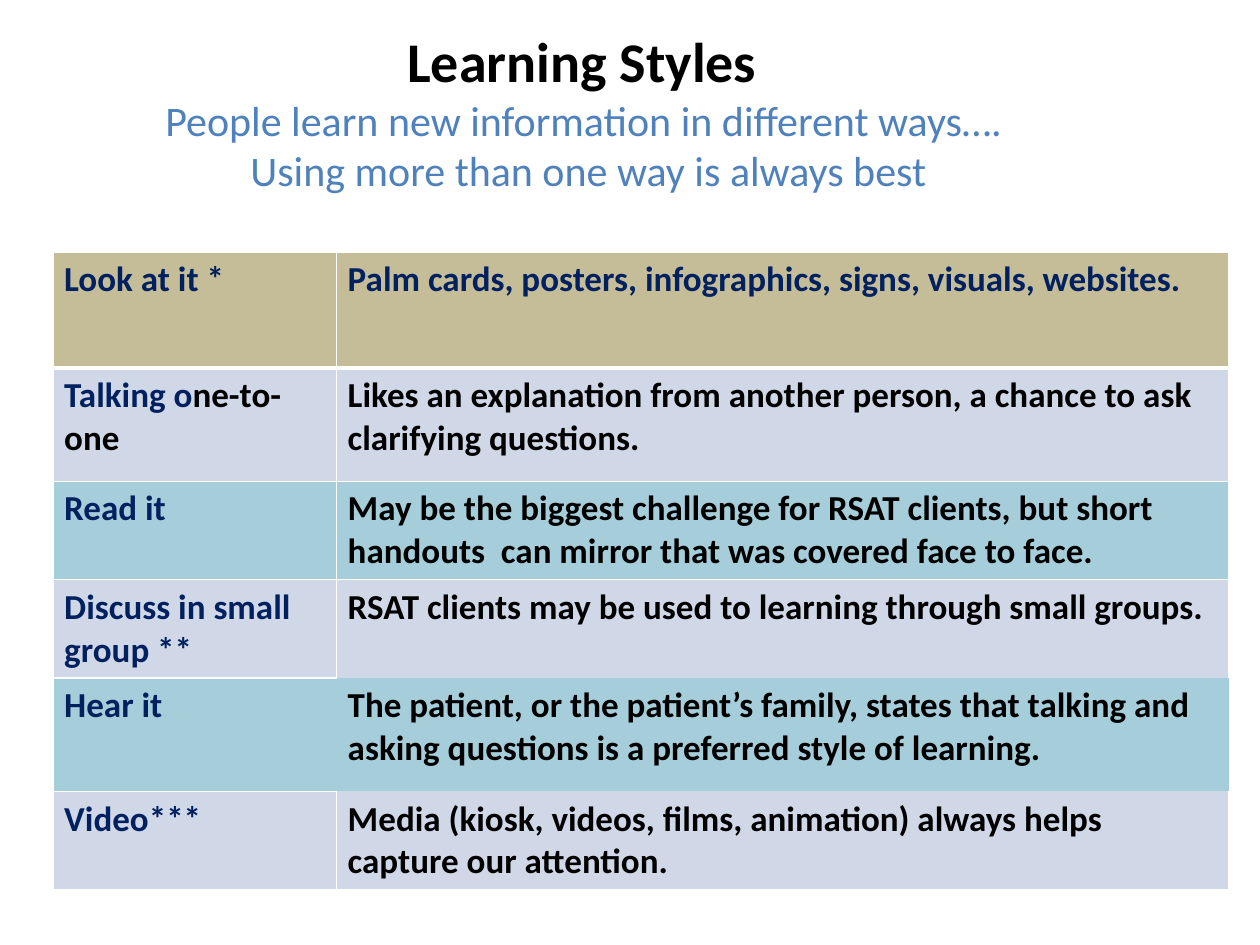
from lxml.etree import SubElement
from pptx import Presentation
from pptx.dml.color import RGBColor
from pptx.enum.text import MSO_ANCHOR, MSO_AUTO_SIZE, PP_ALIGN
from pptx.oxml.ns import qn
from pptx.util import Inches, Pt

COLORS = {
    "black": "000000", "blue": "4F81BD", "navy": "002060", "white": "FFFFFF",
    "tan": "C4BD97", "pale": "D0D8E8", "teal": "A6CEDA",
}
TITLE_LINES = [
    ("Learning Styles ", 32, "black", True),
    ("People learn new information in different ways…. ", 24, "blue", False),
    ("Using more than one way is always best", 24, "blue", False),
]
COLUMN_WIDTHS = [2.25, 7.08]
# Row height, fill, then the runs of the style cell and of the description cell
LEARNING_STYLES = [
    (0.92, "tan", [("Look at it *", "navy")],
     [("Palm cards, posters, infographics, signs, visuals, websites.", "navy")]),
    (0.9, "pale", [("Talking o", "navy"), ("ne-to- one", "black")],
     [("Likes an explanation from another person, a chance to ask clarifying questions.", "black")]),
    (0.75, "teal", [("Read it", "navy")],
     [("May be the biggest challenge for RSAT clients, but short handouts  can mirror "
       "that was covered face to face.", "black")]),
    (0.67, "pale", [("Discuss in small group **", "navy")],
     [("RSAT clients may be used to learning through small groups.", "black")]),
    (0.9, "teal", [("Hear it", "navy")],
     [("The patient, or the patient’s family, states that talking and asking questions "
       "is a preferred style of learning.", "black")]),
    (0.75, "pale", [("Video***", "navy")],
     [("Media (kiosk, videos, films, animation) always helps capture our attention.", "black")]),
]
# Sides without a line, by row and column
OPEN_SIDES = {(3, 1): "B", (4, 0): "R", (4, 1): "LRTB", (5, 1): "T"}


class SlideBuilder:
    font_name = "Calibri"

    def __init__(self, slide):
        self.slide = slide

    def add_run(self, paragraph, text, size, color, bold):
        run = paragraph.add_run()
        run.text = text
        run_format = {"name": self.font_name, "size": Pt(size), "bold": bold}
        for attribute, value in run_format.items():
            setattr(run.font, attribute, value)
        run.font.color.rgb = RGBColor.from_string(COLORS[color])

    def add_title(self, lines, left, top, width, height):
        title = self.slide.shapes.title
        place = {"left": left, "top": top, "width": width, "height": height}
        for attribute, value in place.items():
            setattr(title, attribute, Inches(value))
        frame_format = {"word_wrap": True, "auto_size": MSO_AUTO_SIZE.NONE,
                        "vertical_anchor": MSO_ANCHOR.MIDDLE}
        for attribute, value in frame_format.items():
            setattr(title.text_frame, attribute, value)
        heading = title.text_frame.paragraphs[0]
        heading.alignment = PP_ALIGN.CENTER
        heading.space_after = Pt(6)
        for index, (text, size, color, bold) in enumerate(lines):
            self.add_run(heading, text, size, color, bold)
            if index < len(lines) - 1:
                heading.add_line_break()
                SubElement(heading._p[-1], qn("a:rPr"), sz=str(size * 100))

    def set_borders(self, cell, open_sides, bottom_width):
        """Draw white lines on all sides but the open ones."""
        properties = cell._tc.get_or_add_tcPr()
        for position, side in enumerate("LRTB"):
            width = bottom_width if side == "B" else 1
            border = properties.makeelement(qn(f"a:ln{side}"), {"w": str(Pt(width))})
            properties.insert(position, border)
            if side in open_sides:
                SubElement(border, qn("a:noFill"))
            else:
                fill = SubElement(border, qn("a:solidFill"))
                SubElement(fill, qn("a:srgbClr"), val=COLORS["white"])

    def fill_cell(self, cell, runs, fill):
        margins = {"margin_left": 0.09, "margin_right": 0.09,
                   "margin_top": 0.05, "margin_bottom": 0.05}
        for attribute, value in margins.items():
            setattr(cell, attribute, Inches(value))
        cell.fill.solid()
        cell.fill.fore_color.rgb = RGBColor.from_string(COLORS[fill])
        for text, color in runs:
            self.add_run(cell.text_frame.paragraphs[0], text, 20, color, True)

    def add_table(self, rows, column_widths, left, top):
        height = sum(row[0] for row in rows)
        table = self.slide.shapes.add_table(
            len(rows), len(column_widths), Inches(left), Inches(top),
            Inches(sum(column_widths)), Inches(height)).table
        for column, width in zip(table.columns, column_widths):
            column.width = Inches(width)
        for row_index, (row_height, fill, *row_cells) in enumerate(rows):
            table.rows[row_index].height = Inches(row_height)
            for column_index, runs in enumerate(row_cells):
                cell = table.cell(row_index, column_index)
                self.fill_cell(cell, runs, fill)
                open_sides = OPEN_SIDES.get((row_index, column_index), "")
                self.set_borders(cell, open_sides, 3 if row_index == 0 else 1)


def main():
    presentation = Presentation()
    presentation.slide_width = Inches(10)
    presentation.slide_height = Inches(7.5)
    title_only = presentation.slide_layouts[5]
    builder = SlideBuilder(presentation.slides.add_slide(title_only))
    builder.add_title(TITLE_LINES, 0.42, 0.17, 8.5, 1.42)
    builder.add_table(LEARNING_STYLES, COLUMN_WIDTHS, 0.42, 2)
    presentation.save("out.pptx")


if __name__ == "__main__":
    main()
